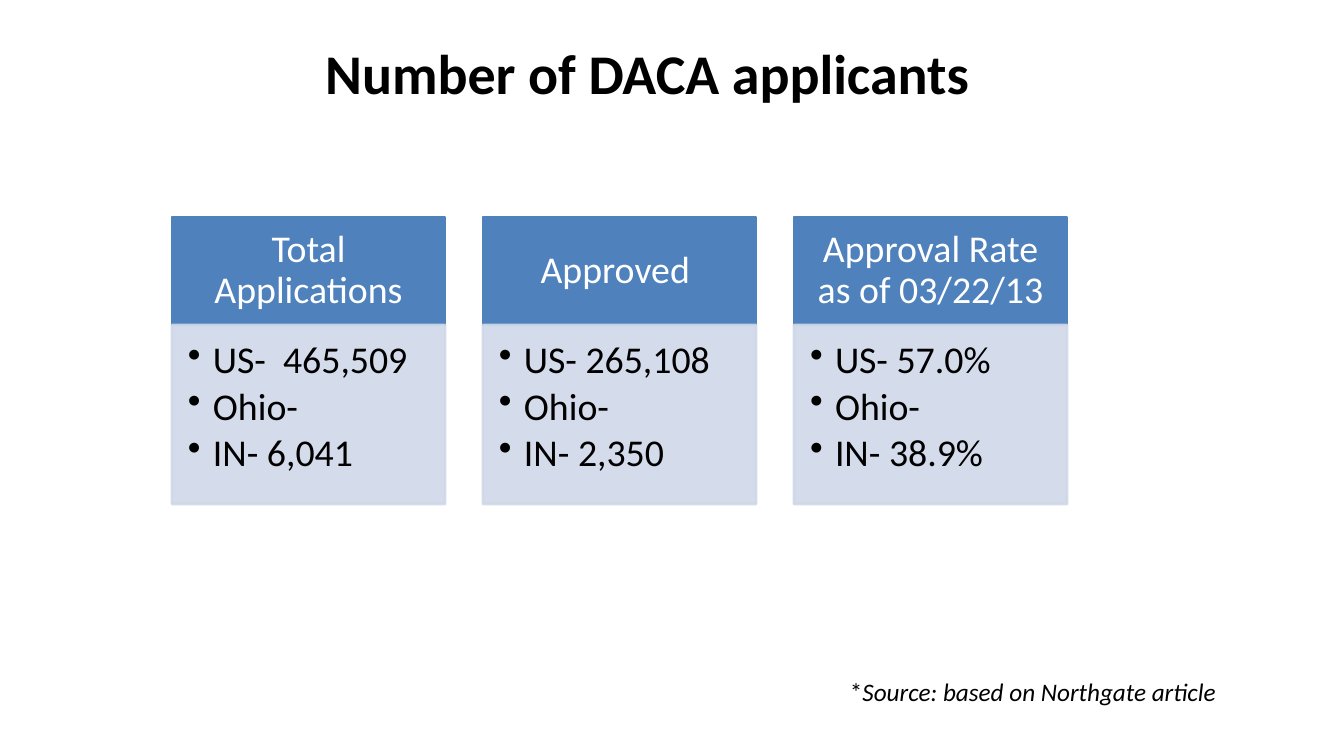
import pptx
import pptx.util
import pptx.dml.color
import pptx.enum.shapes
import pptx.enum.text
import pptx.oxml
import pptx.oxml.ns

PX = 12192000 / 1344
COLORS = {"header": "4F81BD", "body": "D0D8E8", "white": "FFFFFF", "black": "000000"}
ALIGN = pptx.enum.text.PP_ALIGN
ANCHOR = pptx.enum.text.MSO_ANCHOR
NS = pptx.oxml.ns.nsdecls("a")


def px(n):
    return pptx.util.Emu(round(n * PX))


def add_run(p, text, color, size, **fmt):
    r = p.add_run()
    r.text = text
    r.font.color.rgb = pptx.dml.color.RGBColor.from_string(COLORS[color])
    for name, value in {"name": "Calibri", "size": pptx.util.Pt(size), **fmt}.items():
        setattr(r.font, name, value)


prs = pptx.Presentation()
prs.slide_width, prs.slide_height = px(1344), px(756)
s = prs.slides.add_slide(prs.slide_layouts[6])

columns = [
    ("Total Applications", ["US-  465,509", "Ohio-", "IN- 6,041"]),
    ("Approved ", ["US- 265,108", "Ohio-", "IN- 2,350"]),
    ("Approval Rate as of 03/22/13", ["US- 57.0%", "Ohio-", "IN- 38.9%"]),
]
parts = {
    "header": dict(top=217, height=108, color="white", alpha=100, after=9,
                   para={"alignment": ALIGN.CENTER},
                   frame={"vertical_anchor": ANCHOR.MIDDLE}, insets=(21, 12, 21, 12)),
    "body": dict(top=325, height=179, color="black", alpha=90, after=4,
                 para={"alignment": ALIGN.LEFT},
                 frame={"vertical_anchor": ANCHOR.TOP}, insets=(16, 16, 21, 24)),
}
sides = ("margin_left", "margin_top", "margin_right", "margin_bottom")

for i, (heading, items) in enumerate(columns):
    for part, lines in (("header", [heading]), ("body", items)):
        f = parts[part]
        sp = s.shapes.add_shape(pptx.enum.shapes.MSO_SHAPE.RECTANGLE,
                                px(172 + 311 * i), px(f["top"]), px(273), px(f["height"]))
        sp.shadow.inherit = False
        sp.line.width = pptx.util.Pt(2)
        sp.fill.solid()
        sp.line.fill.solid()
        for fill in (sp.fill, sp.line.fill):
            fill.fore_color.rgb = pptx.dml.color.RGBColor.from_string(COLORS[part])
        if f["alpha"] < 100:
            for clr in sp._element.spPr.iter(pptx.oxml.ns.qn("a:srgbClr")):
                clr.append(pptx.oxml.parse_xml(f'<a:alpha {NS} val="{f["alpha"] * 1000}"/>'))
        tf = sp.text_frame
        insets = dict(zip(sides, map(px, f["insets"])))
        for name, value in {"word_wrap": True, **f["frame"], **insets}.items():
            setattr(tf, name, value)
        for j, text in enumerate(lines):
            p = tf.add_paragraph() if j else tf.paragraphs[0]
            para = {"line_spacing": 0.9, "space_after": pptx.util.Pt(f["after"]), **f["para"]}
            for name, value in para.items():
                setattr(p, name, value)
            if part == "body":
                pPr = p._p.get_or_add_pPr()
                pPr.set("marL", str(px(25)))
                pPr.set("indent", str(-px(25)))
                pPr.append(pptx.oxml.parse_xml(f'<a:buChar {NS} char="•"/>'))
            add_run(p, text, f["color"], 27)

notes = [
    ((104, 34, 1099, 78), ALIGN.CENTER, 40, [("Number of DACA applicants ", {"bold": True})]),
    ((840, 671, 444, 40), ALIGN.LEFT, 18,
     [("*", {}), ("Source: based on Northgate article", {"italic": True})]),
]
for box, align, size, runs in notes:
    tf = s.shapes.add_textbox(*map(px, box)).text_frame
    tf.word_wrap = True
    p = tf.paragraphs[0]
    p.alignment = align
    for text, fmt in runs:
        add_run(p, text, "black", size, **fmt)

prs.save("out.pptx")
